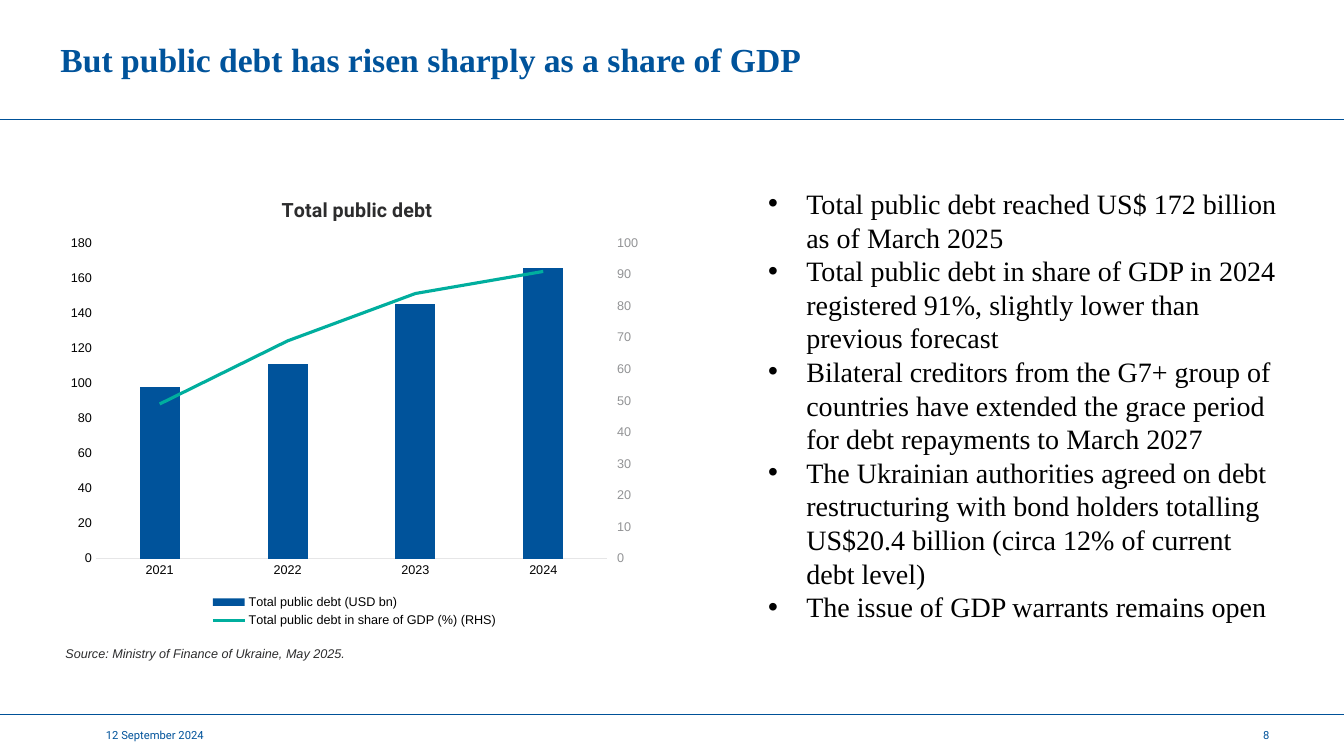
from lxml import etree
from pptx import Presentation
from pptx import util as u
from pptx.chart.data import CategoryChartData
from pptx.dml.color import RGBColor
from pptx.enum import chart as ch, shapes, text
from pptx.oxml import parse_xml
from pptx.oxml.ns import nsdecls, qn

COLORS = {"blue": "00539B", "rule": "005198", "teal": "00AE9E", "dark": "2C2C2D",
          "black": "000000", "grey": "929395", "axis": "E6E6E7"}
WIDTH, HEIGHT = u.Inches(13.33), u.Inches(7.5)

BULLETS = [
    "Total public debt reached US$ 172 billion as of March 2025",
    "Total public debt in share of GDP in 2024 registered 91%, slightly lower than "
    "previous forecast",
    "Bilateral creditors from the G7+ group of countries have extended the grace period "
    "for debt repayments to March 2027",
    "The Ukrainian authorities agreed on debt restructuring with bond holders totalling "
    "US$20.4 billion (circa 12% of current debt level)",
    "The issue of GDP warrants remains open",
]
YEARS = ["2021", "2022", "2023", "2024"]
DEBT = {"Total public debt (USD bn)": [98, 111, 145, 166],
        "Total public debt in share of GDP (%) (RHS)": [49, 69, 84, 91]}


def rgb(name):
    return RGBColor.from_string(COLORS[name])


def box(x, y, w, h):
    """Turn percentages of the slide into left, top, width, height."""
    return [int(share * side / 100) for share, side in
            zip((x, y, w, h), (WIDTH, HEIGHT, WIDTH, HEIGHT))]


def style(font, size, face, color, bold=False, italic=False):
    font.size, font.name, font.bold, font.italic = u.Pt(size), face, bold, italic
    font.color.rgb = rgb(color)


def add_rule(s, y):
    x, y, w, _ = box(0, y, 100, 0)
    line = s.shapes.add_connector(shapes.MSO_CONNECTOR.STRAIGHT, x, y, x + w, y)
    line.line.color.rgb = rgb("rule")
    line.line.width = u.Pt(0.25)
    etree.SubElement(line._element.spPr, qn("a:effectLst"))


def no_margins(tf):
    tf.margin_left = tf.margin_right = tf.margin_top = tf.margin_bottom = 0
    tf.vertical_anchor = text.MSO_ANCHOR.MIDDLE


def add_title(s, words):
    sp = s.shapes.title
    sp.left, sp.top, sp.width, sp.height = box(4.5, 0, 75.92, 15.73)
    no_margins(sp.text_frame)
    p = sp.text_frame.paragraphs[0]
    p.alignment = text.PP_ALIGN.LEFT
    r = p.add_run()
    r.text = words
    style(r.font, 24, "Times New Roman", "blue", bold=True)


def add_text(s, place, paragraphs, size, face, color, italic=False, bullets=False):
    tf = s.shapes.add_textbox(*box(*place)).text_frame
    tf.word_wrap = True
    for i, words in enumerate(paragraphs):
        p = tf.add_paragraph() if i else tf.paragraphs[0]
        if bullets:
            pPr = p._p.get_or_add_pPr()
            pPr.set("marL", str(u.Inches(0.38)))
            pPr.set("indent", str(-u.Inches(0.38)))
            etree.SubElement(pPr, qn("a:buFont"), typeface="Arial")
            etree.SubElement(pPr, qn("a:buChar"), char="•")
        r = p.add_run()
        r.text = words
        style(r.font, size, face, color, italic=italic)
    return tf


def add_footer(s, x, w, words, align):
    tf = add_text(s, (x, 94.53, w, 5.47), [words], 8, "Roboto", "blue")
    no_margins(tf)
    tf.paragraphs[0].alignment = align


def manual_layout(parent, anchor, inner=False, **shares):
    """Place a chart part, in shares of the chart, after its anchor child."""
    for old in parent.findall(qn("c:layout")):
        parent.remove(old)
    layout = etree.Element(qn("c:layout"))
    manual = etree.SubElement(layout, qn("c:manualLayout"))
    if inner:
        etree.SubElement(manual, qn("c:layoutTarget"), val="inner")
    for key in "xy":
        etree.SubElement(manual, qn(f"c:{key}Mode"), val="edge")
    for key, share in shares.items():
        etree.SubElement(manual, qn(f"c:{key}"), val=str(share))
    if anchor is None:
        parent.insert(0, layout)
    else:
        parent.find(qn(anchor)).addnext(layout)


def move_last_series_to_right_axis(chart):
    bars = chart.plots[0]._element
    ser = bars.findall(qn("c:ser"))[-1]
    for flag in ser.findall(qn("c:invertIfNegative")):
        ser.remove(flag)
    lines = parse_xml(
        f'<c:lineChart {nsdecls("c")}><c:grouping val="standard"/><c:varyColors val="0"/>'
        '<c:marker val="1"/><c:axId val="501"/><c:axId val="502"/></c:lineChart>')
    lines.insert(2, ser)
    bars.addnext(lines)
    cat_axis = parse_xml(
        f'<c:catAx {nsdecls("c")}><c:axId val="501"/><c:scaling><c:orientation val="minMax"/>'
        '</c:scaling><c:delete val="1"/><c:axPos val="b"/><c:crossAx val="502"/></c:catAx>')
    right_axis = parse_xml(
        f'<c:valAx {nsdecls("c", "a")}><c:axId val="502"/><c:scaling>'
        '<c:orientation val="minMax"/><c:max val="100"/><c:min val="0"/></c:scaling>'
        '<c:delete val="0"/><c:axPos val="r"/><c:numFmt formatCode="0" sourceLinked="0"/>'
        '<c:majorTickMark val="out"/><c:minorTickMark val="none"/><c:tickLblPos val="nextTo"/>'
        '<c:spPr><a:ln><a:noFill/></a:ln></c:spPr><c:txPr><a:bodyPr/><a:p><a:pPr>'
        f'<a:defRPr sz="900"><a:solidFill><a:srgbClr val="{COLORS["grey"]}"/></a:solidFill>'
        '<a:latin typeface="Arial"/></a:defRPr></a:pPr><a:endParaRPr lang="en-GB"/></a:p>'
        '</c:txPr><c:crossAx val="501"/><c:crosses val="max"/><c:majorUnit val="10"/></c:valAx>')
    left_axis = chart.value_axis._element
    left_axis.addnext(cat_axis)
    cat_axis.addnext(right_axis)


def add_debt_chart(s):
    data = CategoryChartData(number_format="0")
    data.categories = YEARS
    for name, values in DEBT.items():
        data.add_series(name, values)
    chart = s.shapes.add_chart(ch.XL_CHART_TYPE.COLUMN_CLUSTERED,
                               *box(4.5, 23.07, 43.74, 60.53), data).chart
    style(chart.font, 9, "Arial", "black")

    # Title and legend
    title = chart.chart_title
    r = title.text_frame.paragraphs[0].add_run()
    r.text = "Total public debt"
    style(r.font, 14, "Roboto", "dark", bold=True)
    manual_layout(title._element, "c:tx", x=0.37, y=0.04)
    chart.has_legend = True
    legend = chart.legend
    legend.position = ch.XL_LEGEND_POSITION.BOTTOM
    legend.include_in_layout = False
    style(legend.font, 9, "Arial", "black")
    manual_layout(legend._element, "c:legendPos", x=0.25, y=0.91, w=0.5, h=0.09)

    # Axes
    for axis in (chart.category_axis, chart.value_axis):
        axis.has_major_gridlines = False
        axis.major_tick_mark = ch.XL_TICK_MARK.NONE
        style(axis.tick_labels.font, 9, "Arial", "black")
    chart.category_axis.format.line.color.rgb = rgb("axis")
    chart.category_axis.format.line.width = u.Pt(0.75)
    left = chart.value_axis
    left.minimum_scale, left.maximum_scale, left.major_unit = 0, 180, 20
    left.format.line.fill.background()
    left.tick_labels.number_format = "0"
    left.tick_labels.number_format_is_linked = False

    # Columns on the left axis, line on the right axis
    move_last_series_to_right_axis(chart)
    bars, lines = chart.plots
    bars.gap_width = 219
    bars.vary_by_categories = False
    fill = bars.series[0].format.fill
    fill.solid()
    fill.fore_color.rgb = rgb("blue")
    share = lines.series[0]
    share.smooth = False
    share.marker.style = ch.XL_MARKER_STYLE.NONE
    share.format.line.color.rgb = rgb("teal")
    share.format.line.width = u.Pt(2.25)
    manual_layout(bars._element.getparent(), None, inner=True,
                  x=0.06, y=0.15, w=0.87, h=0.69)


def main():
    prs = Presentation()
    prs.slide_width, prs.slide_height = WIDTH, HEIGHT
    s = prs.slides.add_slide(prs.slide_layouts[5])

    # Frame of the slide
    for y in (15.73, 94.53):
        add_rule(s, y)
    add_title(s, "But public debt has risen sharply as a share of GDP")
    add_footer(s, 7.88, 20.48, "12 September 2024", text.PP_ALIGN.LEFT)
    add_footer(s, 90.55, 3.9, "8", text.PP_ALIGN.RIGHT)

    # Chart with its source, and the messages beside it
    add_debt_chart(s)
    add_text(s, (4.13, 84.8, 47.19, 3.33),
             ["Source: Ministry of Finance of Ukraine, May 2025."],
             9, "Arial", "dark", italic=True)
    add_text(s, (56.41, 24, 39.76, 59.73), BULLETS, 20, "Times New Roman", "black",
             bullets=True)
    prs.save("out.pptx")


if __name__ == "__main__":
    main()
